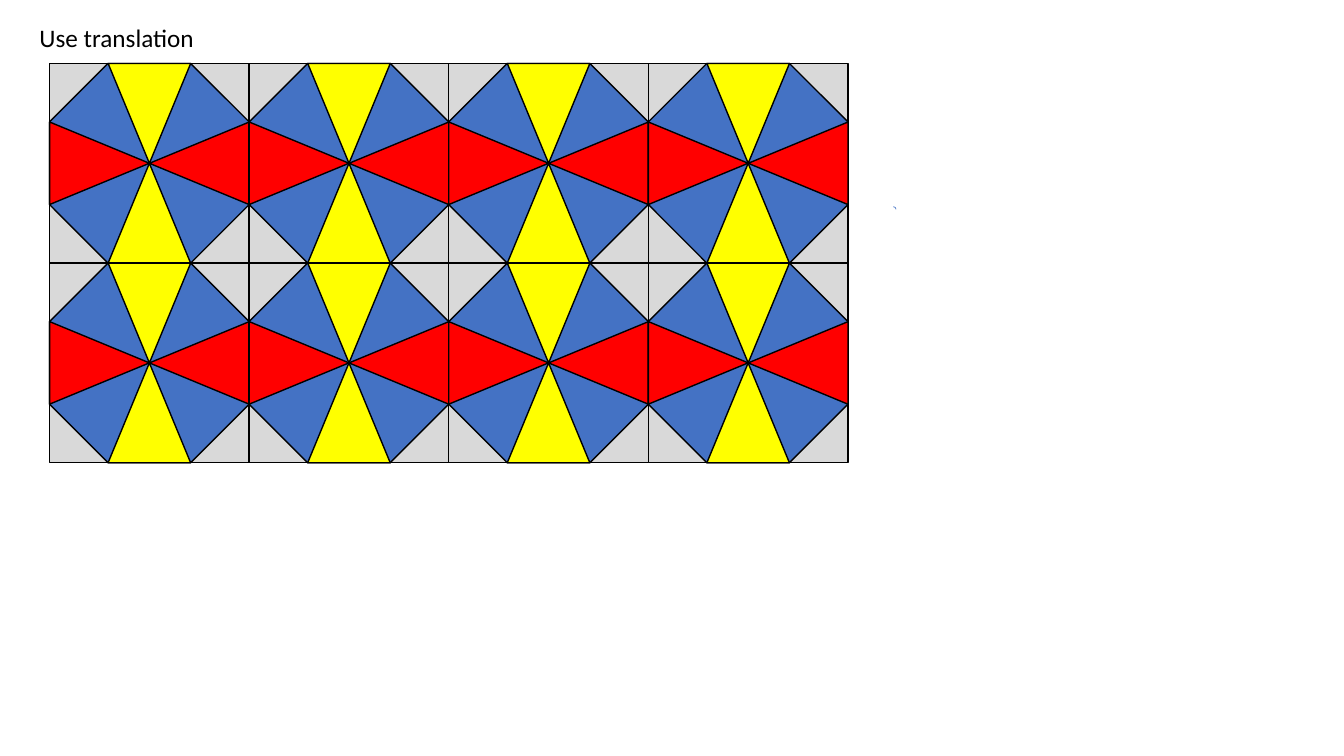
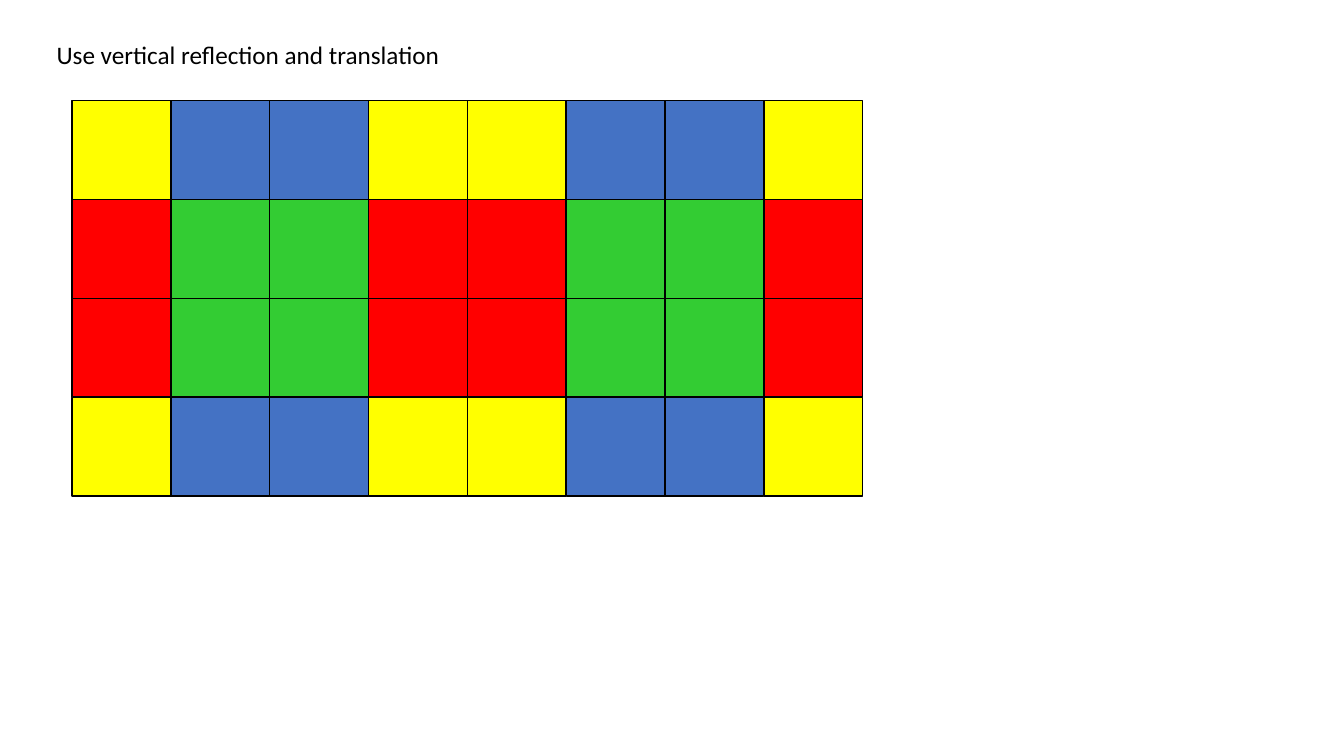
from math import cos, radians, sin

from pptx import Presentation
from pptx.dml.color import RGBColor
from pptx.enum.shapes import MSO_SHAPE as Shape
from pptx.enum.text import MSO_ANCHOR, MSO_AUTO_SIZE, PP_ALIGN
from pptx.util import Cm, Pt

BLACK, GREY, BLUE = "000000", "D9D9D9", "4472C4"
YELLOW, RED, GREEN = "FFFF00", "FF0000", "33CC33"
TILE_COLUMNS, TILE_ROWS = 4, 2

deck = Presentation()
deck.slide_width, deck.slide_height = Cm(33.87), Cm(19.05)
title_only = deck.slide_layouts[5]


def add_titled_page(text, left, top):
    page = deck.slides.add_slide(title_only)
    title = page.shapes.title
    title.left, title.top, title.width, title.height = Cm(left), Cm(top), Cm(10.9), Cm(1.02)
    frame = title.text_frame
    frame_format = {"text": text, "word_wrap": True, "auto_size": MSO_AUTO_SIZE.NONE,
                    "vertical_anchor": MSO_ANCHOR.TOP}
    for name, value in frame_format.items():
        setattr(frame, name, value)
    para = frame.paragraphs[0]
    para.alignment = PP_ALIGN.LEFT
    font = para.runs[0].font
    for name, value in {"name": "Calibri", "size": Pt(18), "bold": False}.items():
        setattr(font, name, value)
    font.color.rgb = RGBColor.from_string(BLACK)
    return page


def draw(shapes, kind, left, top, width, height, fill=None, line=BLACK, weight=1):
    """Add an outlined shape, measured in centimetres; no fill leaves it open."""
    shape = shapes.add_shape(kind, Cm(left), Cm(top), Cm(width), Cm(height))
    shape.shadow.inherit = False
    if fill:
        shape.fill.solid()
        shape.fill.fore_color.rgb = RGBColor.from_string(fill)
    else:
        shape.fill.background()
    shape.line.color.rgb = RGBColor.from_string(line)
    shape.line.width = Pt(weight)
    return shape


# Translation: one octagon tile repeated in both directions
page = add_titled_page("Use translation", 0.74, 0.43)
draw(page.shapes, Shape.ARC, 22.45, 5.21, 0.13, 0.13, line=BLUE, weight=0.5)

tile_size = 5.03
wedge_base, wedge_height = 2.08, tile_size / 2
wedges = [(0, YELLOW), (180, YELLOW), (90, RED), (270, RED)]

for row in range(TILE_ROWS):
    for column in range(TILE_COLUMNS):
        tile = page.shapes.add_group_shape().shapes
        left, top = 1.25 + column * tile_size, 1.6 + row * tile_size
        draw(tile, Shape.RECTANGLE, left, top, tile_size, tile_size, GREY)
        draw(tile, Shape.OCTAGON, left, top, tile_size, tile_size, BLUE)
        for angle, colour in wedges:
            # Each wedge turns so that its tip meets the tile's centre
            center_x = left + tile_size / 2 - sin(radians(angle)) * wedge_height / 2
            center_y = top + tile_size / 2 + cos(radians(angle)) * wedge_height / 2
            wedge = draw(tile, Shape.ISOSCELES_TRIANGLE, center_x - wedge_base / 2,
                         center_y - wedge_height / 2, wedge_base, wedge_height, colour)
            wedge.rotation = angle

# Reflection: every second tile is mirrored across and down
page = add_titled_page("Use vertical reflection and translation", 1.17, 0.86)
square = 2.49
motif = [[YELLOW, BLUE], [RED, GREEN]]

for row in range(TILE_ROWS):
    for column in range(TILE_COLUMNS):
        tile = page.shapes.add_group_shape().shapes
        colour_rows = motif[::-1] if row % 2 else motif
        for y, colours in enumerate(colour_rows):
            for x, colour in enumerate(colours[::-1] if column % 2 else colours):
                draw(tile, Shape.RECTANGLE, 1.82 + (2 * column + x) * square,
                     2.54 + (2 * row + y) * square, square, square, colour)

deck.save("out.pptx")
